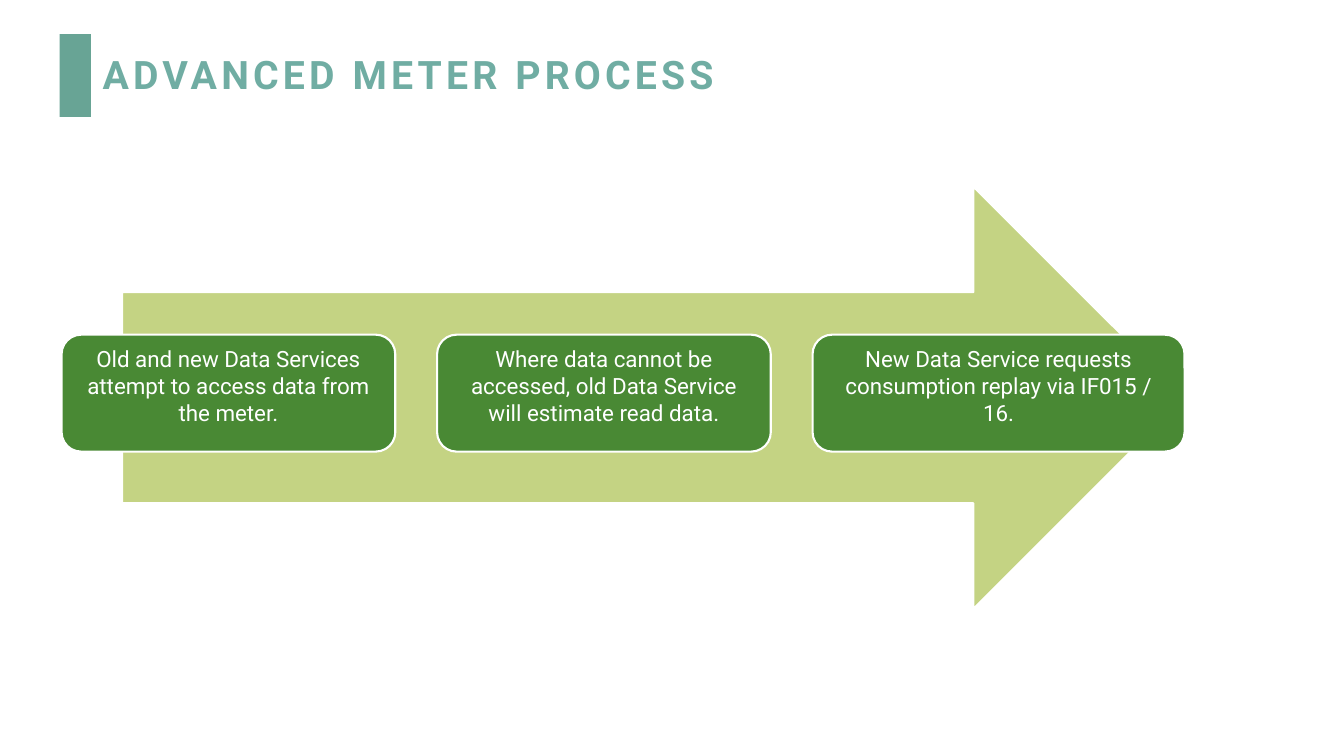
from dataclasses import dataclass

from pptx import Presentation
from pptx.dml.color import RGBColor
from pptx.enum.shapes import MSO_SHAPE
from pptx.enum.text import MSO_ANCHOR, PP_ALIGN
from pptx.shapes.autoshape import Shape
from pptx.slide import Slide
from pptx.text.text import TextFrame
from pptx.util import Inches, Pt

RECTANGLE = MSO_SHAPE.RECTANGLE
ROUNDED_RECTANGLE = MSO_SHAPE.ROUNDED_RECTANGLE
RIGHT_ARROW = MSO_SHAPE.RIGHT_ARROW
TOP, MIDDLE = MSO_ANCHOR.TOP, MSO_ANCHOR.MIDDLE
LEFT, CENTER = PP_ALIGN.LEFT, PP_ALIGN.CENTER

TEAL = RGBColor(0x68, 0xA4, 0x95)
TITLE_TEAL = RGBColor(0x70, 0xAD, 0xA3)
LIME = RGBColor(0xC4, 0xD3, 0x83)
GREEN = RGBColor(0x49, 0x89, 0x34)
WHITE = RGBColor(0xFF, 0xFF, 0xFF)

FONT = "Roboto"
SLIDE_WIDTH, SLIDE_HEIGHT = Inches(13.33), Inches(7.5)
STEP_LEFT, STEP_PITCH = 4.58, 27.94
STEP_TOP, STEP_HEIGHT = 44.27, 15.47


@dataclass(frozen=True)
class Area:
    """Position and size in percent of the slide's width and height."""

    left: float
    top: float
    width: float
    height: float

    def lengths(self) -> tuple[int, int, int, int]:
        return (
            round(SLIDE_WIDTH * self.left / 100),
            round(SLIDE_HEIGHT * self.top / 100),
            round(SLIDE_WIDTH * self.width / 100),
            round(SLIDE_HEIGHT * self.height / 100),
        )


@dataclass(frozen=True)
class Step:
    text: str
    width: float


STEPS = (
    Step("Old and new Data Services attempt to access data from the meter.", 24.83),
    Step("Where data cannot be accessed, old Data Service will estimate read data.", 24.83),
    Step("New Data Service requests consumption replay via IF015 / 16.", 27.68),
)


def write_text(
    frame: TextFrame,
    text: str,
    *,
    size: float,
    color: RGBColor,
    bold: bool = False,
    align: PP_ALIGN = LEFT,
    anchor: MSO_ANCHOR = TOP,
    line_spacing: float = 1.0,
    letter_spacing: float = 0,
) -> None:
    frame.word_wrap = True
    frame.vertical_anchor = anchor
    paragraph = frame.paragraphs[0]
    paragraph.alignment = align
    paragraph.line_spacing = line_spacing
    run = paragraph.add_run()
    run.text = text
    run.font.name = FONT
    run.font.size = Pt(size)
    run.font.bold = bold
    run.font.color.rgb = color
    if letter_spacing:
        run._r.get_or_add_rPr().set("spc", str(round(letter_spacing * 100)))


def add_block(
    slide: Slide, kind: MSO_SHAPE, area: Area, fill: RGBColor, outlined: bool = True
) -> Shape:
    shape = slide.shapes.add_shape(kind, *area.lengths())
    shape.shadow.inherit = False
    shape.fill.solid()
    shape.fill.fore_color.rgb = fill
    if outlined:
        shape.line.color.rgb = WHITE
        shape.line.width = Pt(1.5)
    else:
        shape.line.fill.background()
    return shape


def add_title(slide: Slide) -> None:
    add_block(slide, RECTANGLE, Area(4.43, 4.53, 2.33, 10.93), TEAL, outlined=False)
    title = slide.shapes.add_textbox(*Area(6.9, 5.33, 76.14, 9.6).lengths())
    write_text(
        title.text_frame,
        "ADVANCED METER PROCESS",
        size=28,
        color=TITLE_TEAL,
        bold=True,
        anchor=MIDDLE,
        line_spacing=0.9,
        letter_spacing=3,
    )


def add_process(slide: Slide) -> None:
    add_block(slide, RIGHT_ARROW, Area(9.08, 24.67, 79.07, 55.87), LIME)
    for index, step in enumerate(STEPS):
        area = Area(STEP_LEFT + index * STEP_PITCH, STEP_TOP, step.width, STEP_HEIGHT)
        box = add_block(slide, ROUNDED_RECTANGLE, area, GREEN)
        write_text(box.text_frame, step.text, size=16, color=WHITE, align=CENTER)


def main() -> None:
    presentation = Presentation()
    presentation.slide_width = SLIDE_WIDTH
    presentation.slide_height = SLIDE_HEIGHT
    slide = presentation.slides.add_slide(presentation.slide_layouts[6])
    add_title(slide)
    add_process(slide)
    presentation.save("out.pptx")


if __name__ == "__main__":
    main()
